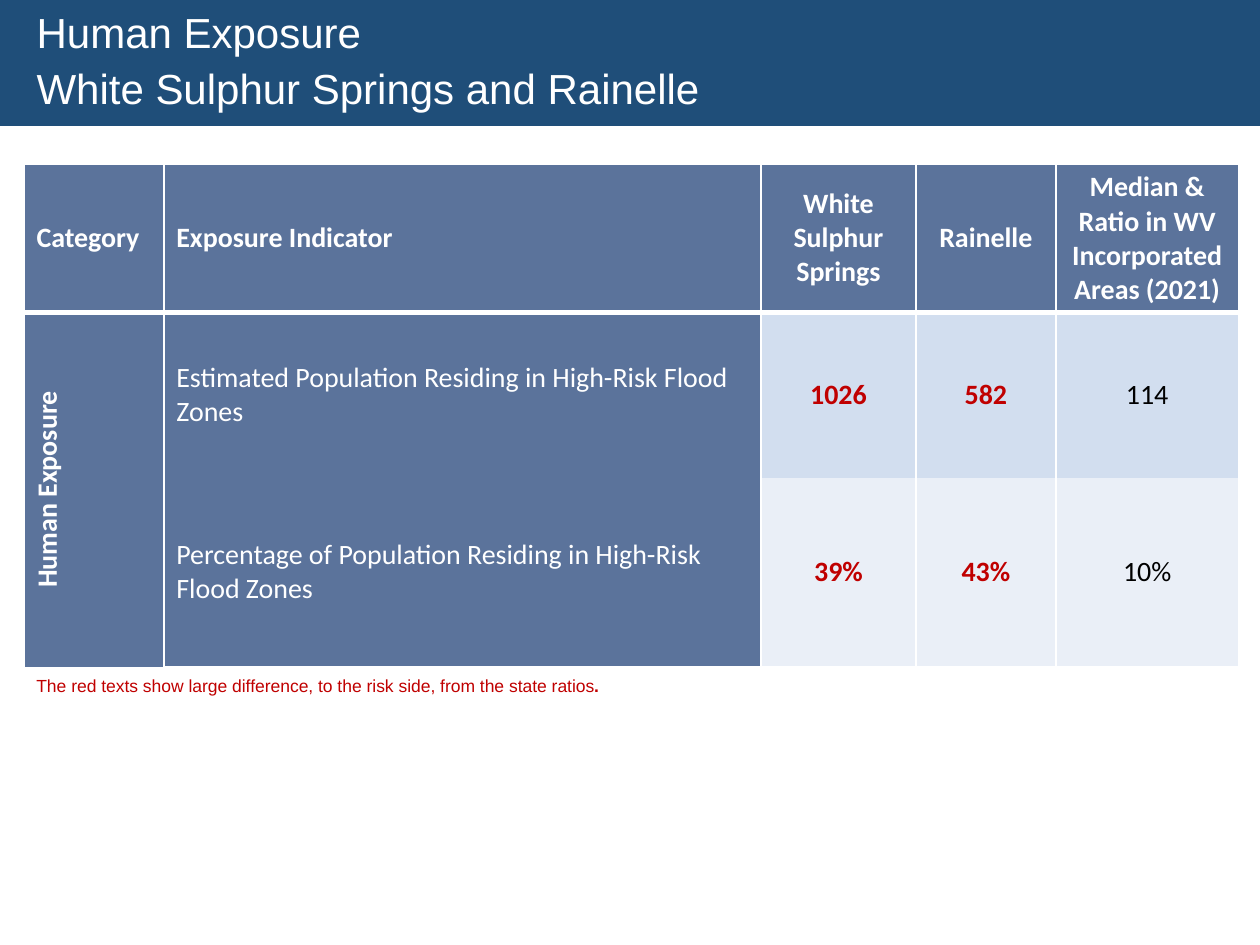
import pptx
import pptx.util
import pptx.dml.color
import pptx.enum.text
import pptx.oxml
import pptx.oxml.ns
from pptx.util import Inches

WHITE, BLACK, RED = "FFFFFF", "000000", "C00000"
NAVY, SLATE, LIGHT, PALE = "1F4E79", "5B739B", "D2DEEF", "EAEFF7"
LEFT, CENTER = pptx.enum.text.PP_ALIGN.LEFT, pptx.enum.text.PP_ALIGN.CENTER
MIDDLE = pptx.enum.text.MSO_ANCHOR.MIDDLE

HEADERS = ["Category", "Exposure Indicator", "White Sulphur Springs", "Rainelle",
           "Median & Ratio in WV Incorporated Areas (2021)"]
BODY = [
    ["Human Exposure", "Estimated Population Residing in High-Risk Flood Zones", "1026", "582", "114"],
    ["", "Percentage of Population Residing in High-Risk Flood Zones", "39%", "43%", "10%"],
]
COLUMN_WIDTHS = [1.11, 4.74, 1.23, 1.11, 1.45]
ROW_HEIGHTS = [1.18, 1.31, 1.5]


def color(value):
    return pptx.dml.color.RGBColor.from_string(value)


class SlideBuilder:
    """Hold the style and the current slide, and add each kind of element."""

    def __init__(self, presentation):
        self.heading_font, self.table_font = "Arial", "Calibri"
        self.slide = presentation.slides.add_slide(presentation.slide_layouts[5])

    def style(self, font, name, size, value, bold=False):
        font.name, font.size, font.bold = name, pptx.util.Pt(size), bold
        font.color.rgb = color(value)

    def title(self, lines):
        shape = self.slide.shapes.title
        shape.left, shape.top, shape.width, shape.height = 0, 0, Inches(10), Inches(1)
        shape.fill.solid()
        shape.fill.fore_color.rgb = color(NAVY)
        frame = shape.text_frame
        frame.text = "\n".join(lines)
        frame.auto_size = pptx.enum.text.MSO_AUTO_SIZE.NONE
        frame.vertical_anchor = MIDDLE
        frame.margin_left = Inches(0.29)
        for index, paragraph in enumerate(frame.paragraphs):
            paragraph.alignment = LEFT
            paragraph.line_spacing = 0.9
            paragraph.space_before = pptx.util.Pt(6 if index else 0)
            self.style(paragraph.font, self.heading_font, 24, WHITE)

    def note(self, text, ending, left, top, width, height):
        shape = self.slide.shapes.add_textbox(Inches(left), Inches(top), Inches(width), Inches(height))
        shape.text_frame.word_wrap = True
        paragraph = shape.text_frame.paragraphs[0]
        self.style(paragraph.font, self.heading_font, 10, RED)
        paragraph.add_run().text = text
        run = paragraph.add_run()
        run.text = ending
        run.font.bold = True

    def borders(self, cell, widths):
        properties = cell._tc.get_or_add_tcPr()
        for index, (side, width) in enumerate(zip("LRTB", widths)):
            fill = f'<a:solidFill><a:srgbClr val="{WHITE}"/></a:solidFill>' if width else "<a:noFill/>"
            line = pptx.oxml.parse_xml(
                f'<a:ln{side} {pptx.oxml.ns.nsdecls("a")} w="{pptx.util.Pt(width)}">{fill}</a:ln{side}>')
            properties.insert(index, line)

    def cell(self, cell, text, fill, value, bold, alignment):
        cell.text = text
        cell.vertical_anchor = MIDDLE
        cell.fill.solid()
        cell.fill.fore_color.rgb = color(fill)
        paragraph = cell.text_frame.paragraphs[0]
        paragraph.alignment = alignment
        self.style(paragraph.font, self.table_font, 16, value, bold)

    def table(self, left, top):
        rows = [HEADERS] + BODY
        table = self.slide.shapes.add_table(
            len(rows), len(HEADERS), Inches(left), Inches(top),
            Inches(sum(COLUMN_WIDTHS)), Inches(sum(ROW_HEIGHTS))).table
        for column, width in zip(table.columns, COLUMN_WIDTHS):
            column.width = Inches(width)
        for row, height in zip(table.rows, ROW_HEIGHTS):
            row.height = Inches(height)
        row_borders = [(1, 1, 1, 3), (1, 1, 3, 0), (1, 1, 0, 1)]
        for row, texts in enumerate(rows):
            for column, text in enumerate(texts):
                label = row == 0 or column < 2
                flagged = column in (2, 3)
                fill = SLATE if label else (LIGHT, PALE)[row - 1]
                value = WHITE if label else RED if flagged else BLACK
                bold = row == 0 or column == 0 or flagged
                centered = column > 1 or (row and column == 0)
                cell = table.cell(row, column)
                self.cell(cell, text, fill, value, bold, CENTER if centered else LEFT)
                self.borders(cell, row_borders[row])
        category = table.cell(1, 0)
        category.merge(table.cell(2, 0))
        category._tc.get_or_add_tcPr().set("vert", "vert270")


def main():
    presentation = pptx.Presentation()
    presentation.slide_width, presentation.slide_height = Inches(10), Inches(7.5)
    builder = SlideBuilder(presentation)
    builder.title(["Human Exposure", "White Sulphur Springs and Rainelle"])
    builder.note("The red texts show large difference, to the risk side, from the state ratios", ".",
                 0.19, 5.31, 9.65, 0.26)
    builder.table(0.19, 1.3)
    presentation.save("out.pptx")


if __name__ == "__main__":
    main()
